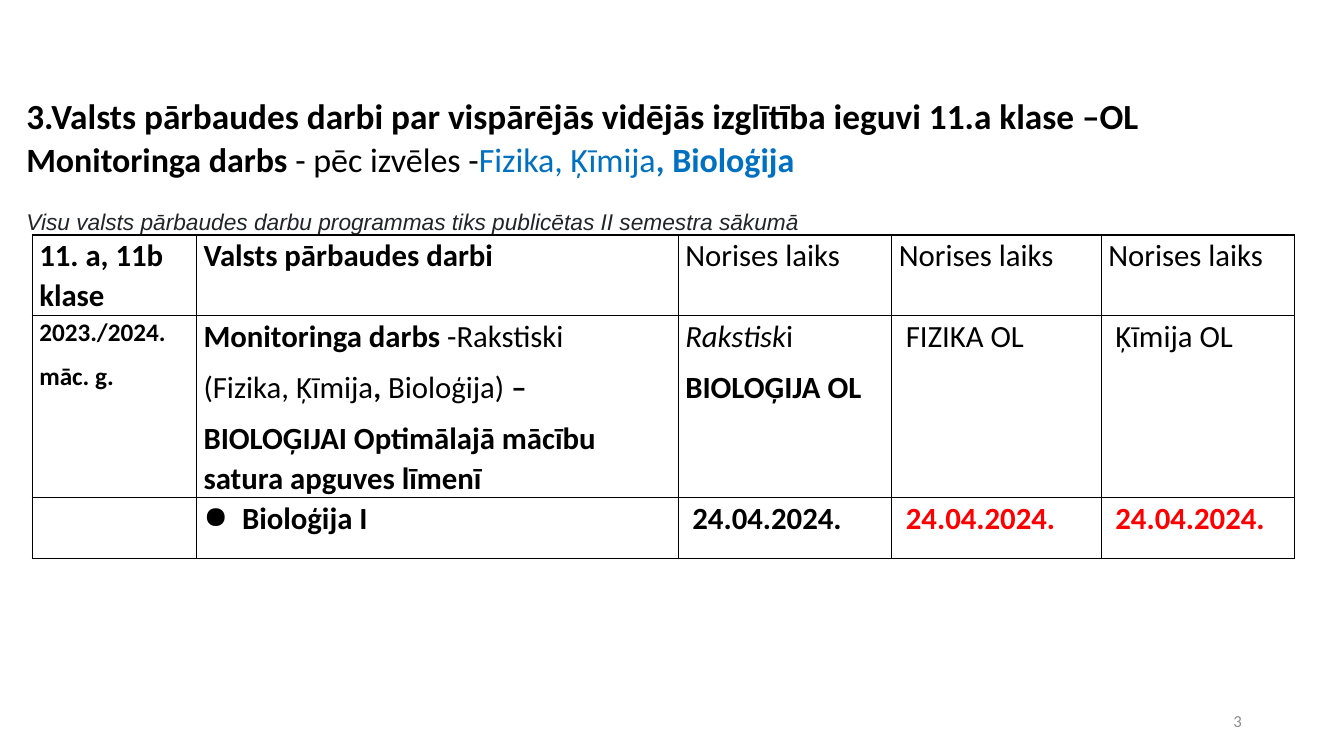
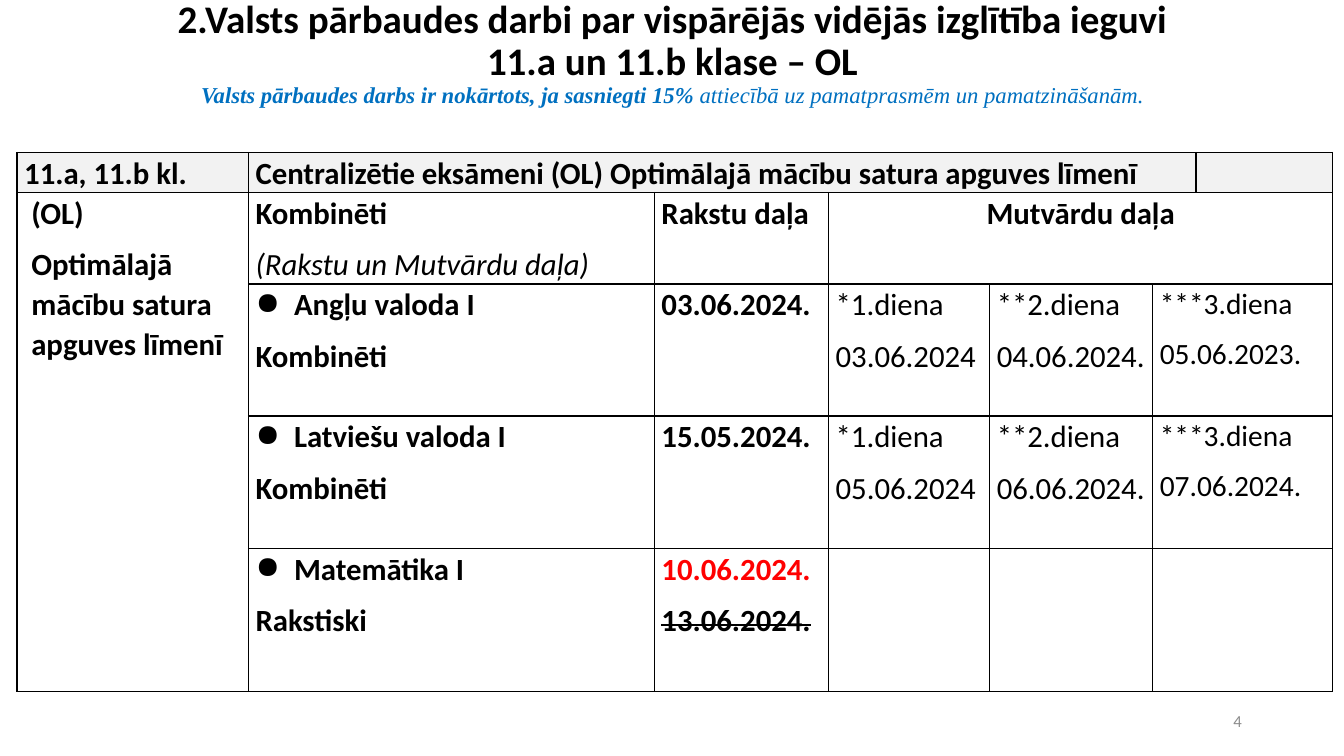
from dataclasses import dataclass

from lxml.etree import SubElement
from pptx import Presentation
from pptx.dml.color import RGBColor
from pptx.enum.text import MSO_ANCHOR, MSO_AUTO_SIZE, PP_ALIGN
from pptx.oxml.ns import qn
from pptx.util import Cm, Pt

BLACK = RGBColor(0x00, 0x00, 0x00)
BLUE = RGBColor(0x00, 0x70, 0xC0)
RED = RGBColor(0xFF, 0x00, 0x00)
INK = RGBColor(0x21, 0x25, 0x29)
GREY = RGBColor(0x8C, 0x8C, 0x8C)
HEADER_FILL = RGBColor(0xF2, 0xF2, 0xF2)

TITLE_ONLY = 5
BULLET_INDENT = Cm(0.97)
SMALL_INDENT = Cm(0.18)


@dataclass
class Span:
    """A piece of a line; None keeps the line's own setting."""
    text: str
    bold: bool = None
    italic: bool = None
    color: RGBColor = None
    strike: bool = False


@dataclass
class Line:
    """One paragraph: a string, or a list of Spans."""
    content: object
    size: float = 22
    bold: bool = True
    italic: bool = False
    color: RGBColor = BLACK
    font: str = "Calibri"
    align: PP_ALIGN = PP_ALIGN.LEFT
    spacing: float = 1.07
    before: float = 0
    after: float = 8
    indent: int = 0
    bullet: bool = False


def write_lines(text_frame, lines):
    for index, line in enumerate(lines):
        paragraph = text_frame.add_paragraph() if index else text_frame.paragraphs[0]
        paragraph.alignment = line.align
        paragraph.line_spacing = line.spacing
        paragraph.space_before = Pt(line.before)
        paragraph.space_after = Pt(line.after)
        properties = paragraph._p.get_or_add_pPr()
        if line.bullet:
            properties.set("marL", str(BULLET_INDENT))
            properties.set("indent", str(-BULLET_INDENT))
            SubElement(properties, qn("a:buChar"), char="●")
        elif line.indent:
            properties.set("marL", str(line.indent))
        font = paragraph.font
        font.name, font.size = line.font, Pt(line.size)
        font.bold, font.italic = line.bold, line.italic
        font.color.rgb = line.color
        spans = [Span(line.content)] if isinstance(line.content, str) else line.content
        for span in spans:
            run = paragraph.add_run()
            run.text = span.text
            if span.bold is not None:
                run.font.bold = span.bold
            if span.italic is not None:
                run.font.italic = span.italic
            if span.color is not None:
                run.font.color.rgb = span.color
            if span.strike:
                run._r.get_or_add_rPr().set("strike", "sngStrike")


def format_cell(cell, fill_color):
    """Set narrow margins, a thin black frame and the fill."""
    cell.margin_left = cell.margin_right = Cm(0.18)
    cell.margin_top = cell.margin_bottom = 0
    properties = cell._tc.get_or_add_tcPr()
    for side in ("a:lnL", "a:lnR", "a:lnT", "a:lnB"):
        border = SubElement(properties, qn(side), w=str(Pt(1)))
        solid = SubElement(border, qn("a:solidFill"))
        SubElement(solid, qn("a:srgbClr"), val=str(BLACK))
    if fill_color is None:
        cell.fill.background()
    else:
        cell.fill.solid()
        cell.fill.fore_color.rgb = fill_color


time_heading = [Line("Norises laiks", bold=False)]
red_date = [Line("24.04.2024.", color=RED, indent=SMALL_INDENT)]

monitoring = {
    "number": "3",
    "title_box": (Cm(0.41), Cm(2.29), Cm(32.26), Cm(3.6)),
    "title": [
        Line("3.Valsts pārbaudes darbi par vispārējās vidējās izglītība ieguvi 11.a klase –OL",
             size=25.2, after=0),
        Line([Span("Monitoringa darbs"), Span(" - pēc izvēles -", bold=False),
              Span("Fizika, Ķīmija", bold=False, color=BLUE),
              Span(", Bioloģija", color=BLUE)], size=24.3, after=0),
        Line("Visu valsts pārbaudes darbu programmas tiks publicētas II semestra sākumā",
             size=16.2, font="Arial", color=INK, bold=False, italic=True,
             before=19, after=0),
    ],
    "table_corner": (Cm(0.81), Cm(5.92)),
    "columns": (4.14, 12.14, 5.38, 5.28, 4.88),
    "rows": (2.0, 4.6, 1.52),
    "merges": [],
    "header_fill": None,
    "cells": {
        (0, 0): [Line("11. a, 11b klase")],
        (0, 1): [Line("Valsts pārbaudes darbi")],
        (0, 2): time_heading,
        (0, 3): time_heading,
        (0, 4): time_heading,
        (1, 0): [Line("2023./2024.", size=18), Line("māc. g.", size=18)],
        (1, 1): [
            Line([Span("Monitoringa darbs"), Span(" -Rakstiski", bold=False)]),
            Line([Span("(Fizika, Ķīmija", bold=False), Span(", "),
                  Span("Bioloģija)", bold=False), Span(" –")]),
            Line("BIOLOĢIJAI Optimālajā mācību satura apguves līmenī"),
        ],
        (1, 2): [
            Line([Span("Rakstisk", italic=True), Span("i")], bold=False),
            Line("BIOLOĢIJA OL"),
        ],
        (1, 3): [Line("FIZIKA OL", bold=False, indent=SMALL_INDENT)],
        (1, 4): [Line("Ķīmija OL", bold=False, indent=SMALL_INDENT)],
        (2, 1): [Line("Bioloģija I", bullet=True)],
        (2, 2): [Line("24.04.2024.", indent=SMALL_INDENT)],
        (2, 3): red_date,
        (2, 4): red_date,
    },
}

centred = {"align": PP_ALIGN.CENTER, "spacing": 0.9, "after": 0}
exams = {
    "number": "4",
    "title_box": (Cm(2.34), Cm(0), Cm(29.21), Cm(3.6)),
    "title": [
        Line("2.Valsts pārbaudes darbi par vispārējās vidējās izglītība ieguvi",
             size=27.9, **centred),
        Line("11.a un 11.b klase – OL", size=27.9, **centred),
        Line([Span("Valsts pārbaudes darbs ir nokārtots, ja sasniegti 15% "),
              Span("attiecībā uz pamatprasmēm un pamatzināšanām.", bold=False)],
             size=16.2, font="Times New Roman", color=BLUE, italic=True, **centred),
    ],
    "table_corner": (Cm(0.43), Cm(3.84)),
    "columns": (5.83, 10.23, 4.39, 4.06, 4.11, 1.09, 3.45),
    "rows": (1.0, 2.29, 3.33, 3.33, 3.61),
    "merges": [((0, 1), (0, 5)), ((1, 0), (4, 0)), ((1, 3), (1, 6)),
               ((2, 5), (2, 6)), ((3, 5), (3, 6)), ((4, 5), (4, 6))],
    "header_fill": HEADER_FILL,
    "cells": {
        (0, 0): [Line("11.a, 11.b kl.")],
        (0, 1): [Line("Centralizētie eksāmeni (OL) Optimālajā mācību satura apguves līmenī")],
        (1, 0): [Line("(OL)", indent=SMALL_INDENT),
                 Line("Optimālajā mācību satura apguves līmenī", indent=SMALL_INDENT)],
        (1, 1): [Line("Kombinēti"),
                 Line("(Rakstu un Mutvārdu daļa)", bold=False, italic=True)],
        (1, 2): [Line("Rakstu daļa")],
        (1, 3): [Line("Mutvārdu daļa", align=PP_ALIGN.CENTER)],
        (4, 1): [Line("Matemātika I", bullet=True), Line("Rakstiski")],
        (4, 2): [Line("10.06.2024.", color=RED),
                 Line([Span("13.06.2024.", strike=True)])],
    },
}

language_exams = [
    ("Angļu valoda I", "03.06.2024.", ("03.06.2024", "04.06.2024.", "05.06.2023.")),
    ("Latviešu valoda I", "15.05.2024.", ("05.06.2024", "06.06.2024.", "07.06.2024.")),
]
for row, (subject, written_date, oral_dates) in enumerate(language_exams, start=2):
    exams["cells"][row, 1] = [Line(subject, bullet=True), Line("Kombinēti")]
    exams["cells"][row, 2] = [Line(written_date)]
    for day, oral_date in enumerate(oral_dates, start=1):
        size = 21 if day == 3 else 22
        exams["cells"][row, 2 + day] = [
            Line("*" * day + f"{day}.diena", size=size, bold=False),
            Line(oral_date, size=size, bold=False),
        ]

presentation = Presentation()
presentation.slide_width = Cm(33.87)
presentation.slide_height = Cm(19.05)

for page in (monitoring, exams):
    slide = presentation.slides.add_slide(presentation.slide_layouts[TITLE_ONLY])

    title = slide.shapes.title
    title.left, title.top, title.width, title.height = page["title_box"]
    title_frame = title.text_frame
    title_frame.auto_size = MSO_AUTO_SIZE.NONE
    title_frame.vertical_anchor = MSO_ANCHOR.TOP
    title_frame.margin_top = title_frame.margin_bottom = 0
    write_lines(title_frame, page["title"])

    columns, rows = page["columns"], page["rows"]
    table = slide.shapes.add_table(
        len(rows), len(columns), *page["table_corner"], Cm(sum(columns)), Cm(sum(rows))
    ).table
    table.first_row = table.horz_banding = False
    for column, width in zip(table.columns, columns):
        column.width = Cm(width)
    for row, height in zip(table.rows, rows):
        row.height = Cm(height)
    for first, last in page["merges"]:
        table.cell(*first).merge(table.cell(*last))
    for row_index in range(len(rows)):
        for column_index in range(len(columns)):
            cell = table.cell(row_index, column_index)
            format_cell(cell, page["header_fill"] if row_index == 0 else None)
            write_lines(cell.text_frame, page["cells"].get((row_index, column_index), []))

    number_box = slide.shapes.add_textbox(Cm(23.93), Cm(17.65), Cm(7.62), Cm(1.02))
    number_box.text_frame.word_wrap = True
    number_box.text_frame.vertical_anchor = MSO_ANCHOR.MIDDLE
    write_lines(number_box.text_frame, [
        Line(page["number"], size=12, bold=False, color=GREY,
             align=PP_ALIGN.RIGHT, spacing=1.0, after=0)
    ])

presentation.save("out.pptx")
